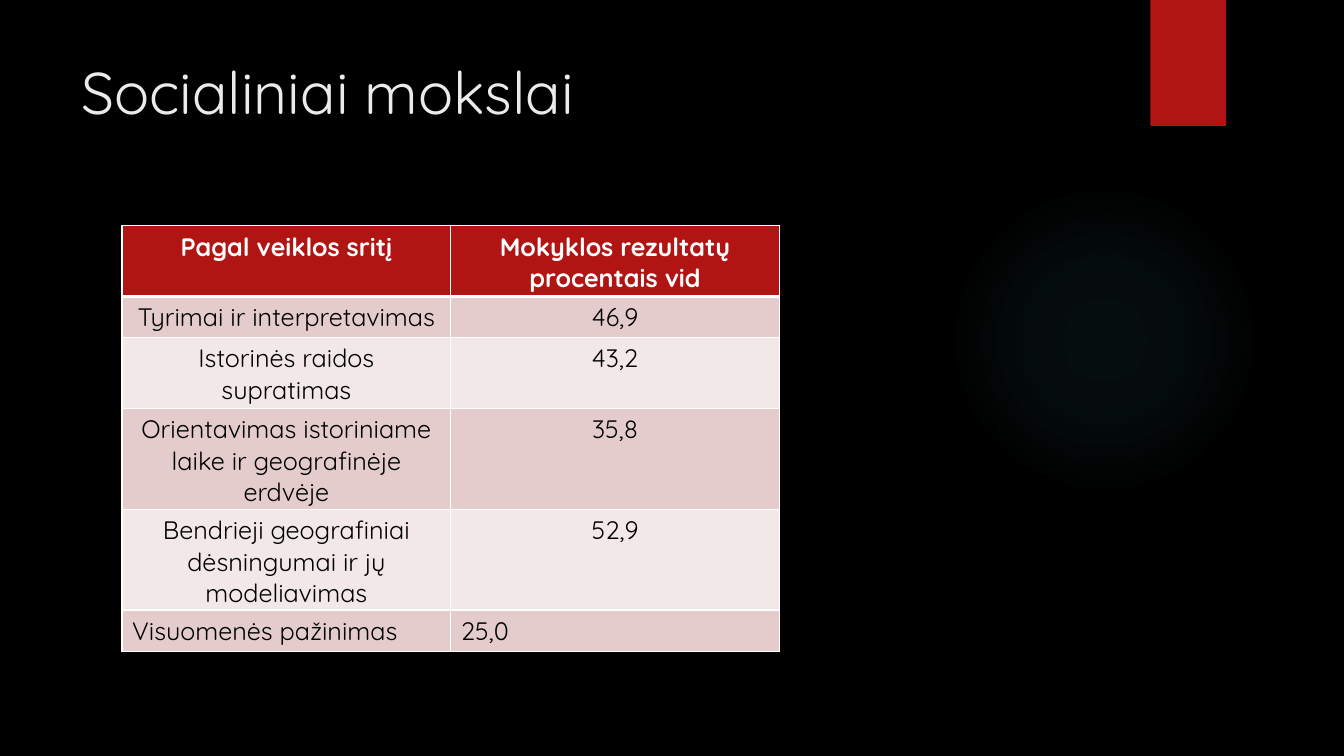
"""Builds the slide of school results in social sciences."""
from dataclasses import dataclass

from pptx import Presentation
from pptx.dml.color import RGBColor
from pptx.enum.shapes import MSO_SHAPE
from pptx.enum.text import PP_ALIGN
from pptx.oxml import parse_xml
from pptx.oxml.ns import nsdecls
from pptx.shapes.autoshape import Shape
from pptx.slide import Slide
from pptx.table import _Cell
from pptx.text.text import TextFrame
from pptx.util import Inches, Length, Pt

SLIDE_WIDTH, SLIDE_HEIGHT = Inches(13.33), Inches(7.5)
FONT = "Quicksand"
BLACK = RGBColor(0x00, 0x00, 0x00)
WHITE = RGBColor(0xFF, 0xFF, 0xFF)
TITLE_GREY = RGBColor(0xEB, 0xEB, 0xEB)
RED = RGBColor(0xB0, 0x15, 0x13)
GLOW = RGBColor(0x50, 0xB9, 0xC1)
BANDS = (RGBColor(0xE4, 0xCC, 0xCC), RGBColor(0xF2, 0xE8, 0xE7))
GLOW_STOPS = ((0, 7), (36, 6), (69, 0))


@dataclass(frozen=True)
class Area:
    """A rectangle in percent of the slide's width and height."""

    left: float
    top: float
    width: float
    height: float

    def box(self) -> tuple[Length, ...]:
        """Return the rectangle in slide units."""
        return (across(self.left), down(self.top), across(self.width), down(self.height))


@dataclass(frozen=True)
class Result:
    """One field of activity with the school's average."""

    field: str
    average: str
    align: PP_ALIGN = PP_ALIGN.CENTER


HEADER = Result("Pagal veiklos sritį", "Mokyklos rezultatų procentais vid")
RESULTS = (
    Result("Tyrimai ir interpretavimas", "46,9"),
    Result("Istorinės raidos supratimas", "43,2"),
    Result("Orientavimas istoriniame laike ir geografinėje erdvėje", "35,8"),
    Result("Bendrieji geografiniai dėsningumai ir jų modeliavimas", "52,9"),
    Result("Visuomenės pažinimas", "25,0", PP_ALIGN.LEFT),
)
ROW_SHARE = 5.47
GLOW_AREA = Area(70.59, 24.4, 23.11, 41.07)
RIBBON_AREA = Area(85.6, 0, 5.63, 16.67)
TITLE_AREA = Area(5.33, 6.67, 77.19, 20.4)
TABLE_AREA = Area(9.08, 29.87, 48.91, ROW_SHARE * (len(RESULTS) + 1))


def across(percent: float) -> Length:
    """Return a share of the slide's width."""
    return Length(round(SLIDE_WIDTH * percent / 100))


def down(percent: float) -> Length:
    """Return a share of the slide's height."""
    return Length(round(SLIDE_HEIGHT * percent / 100))


def write(frame: TextFrame, text: str, *, size: float, color: RGBColor,
          bold: bool = False, align: PP_ALIGN = PP_ALIGN.LEFT) -> None:
    """Put one formatted paragraph into a text frame."""
    frame.word_wrap = True
    paragraph = frame.paragraphs[0]
    paragraph.alignment = align
    run = paragraph.add_run()
    run.text = text
    run.font.name = FONT
    run.font.size = Pt(size)
    run.font.bold = bold
    run.font.color.rgb = color


def add_plain(slide: Slide, kind: MSO_SHAPE, area: Area, color: RGBColor) -> Shape:
    """Add a filled shape without outline or shadow."""
    shape = slide.shapes.add_shape(kind, *area.box())
    shape.shadow.inherit = False
    shape.fill.solid()
    shape.fill.fore_color.rgb = color
    shape.line.fill.background()
    return shape


def add_glow(slide: Slide) -> None:
    """Add the faint circle that fades outwards."""
    glow = add_plain(slide, MSO_SHAPE.OVAL, GLOW_AREA, GLOW)
    stops = "".join(
        f'<a:gs pos="{position * 1000}"><a:srgbClr val="{GLOW}">'
        f'<a:alpha val="{alpha * 1000}"/></a:srgbClr></a:gs>'
        for position, alpha in GLOW_STOPS
    )
    gradient = parse_xml(
        f'<a:gradFill {nsdecls("a")} rotWithShape="1"><a:gsLst>{stops}</a:gsLst>'
        '<a:path path="circle"><a:fillToRect l="50000" t="50000" r="50000" b="50000"/>'
        "</a:path></a:gradFill>"
    )
    properties = glow.fill._xPr
    properties.replace(properties.solidFill, gradient)


def style_cell(cell: _Cell, fill: RGBColor, bottom: float) -> None:
    """Fill a cell and draw its white borders."""
    cell.fill.solid()
    cell.fill.fore_color.rgb = fill
    properties = cell._tc.get_or_add_tcPr()
    widths = {"lnL": 1, "lnR": 1, "lnT": 1, "lnB": bottom}
    for index, (side, width) in enumerate(widths.items()):
        properties.insert(index, parse_xml(
            f'<a:{side} {nsdecls("a")} w="{Pt(width)}"><a:solidFill>'
            f'<a:srgbClr val="{WHITE}"/></a:solidFill></a:{side}>'
        ))


def add_results(slide: Slide) -> None:
    """Add the table of averages."""
    rows = (HEADER, *RESULTS)
    table = slide.shapes.add_table(len(rows), 2, *TABLE_AREA.box()).table
    for number, result in enumerate(rows):
        header = number == 0
        table.rows[number].height = down(ROW_SHARE)
        for column, text in enumerate((result.field, result.average)):
            cell = table.cell(number, column)
            style_cell(cell, RED if header else BANDS[(number - 1) % 2], 3 if header else 1)
            write(cell.text_frame, text, size=18, color=WHITE if header else BLACK,
                  bold=header, align=result.align)


def main() -> None:
    """Build and save the slide."""
    deck = Presentation()
    deck.slide_width, deck.slide_height = SLIDE_WIDTH, SLIDE_HEIGHT
    slide = deck.slides.add_slide(deck.slide_layouts[6])
    slide.background.fill.solid()
    slide.background.fill.fore_color.rgb = BLACK
    add_glow(slide)
    add_plain(slide, MSO_SHAPE.RECTANGLE, RIBBON_AREA, RED)
    title = slide.shapes.add_textbox(*TITLE_AREA.box())
    write(title.text_frame, "Socialiniai mokslai", size=42, color=TITLE_GREY)
    add_results(slide)
    deck.save("out.pptx")


if __name__ == "__main__":
    main()
